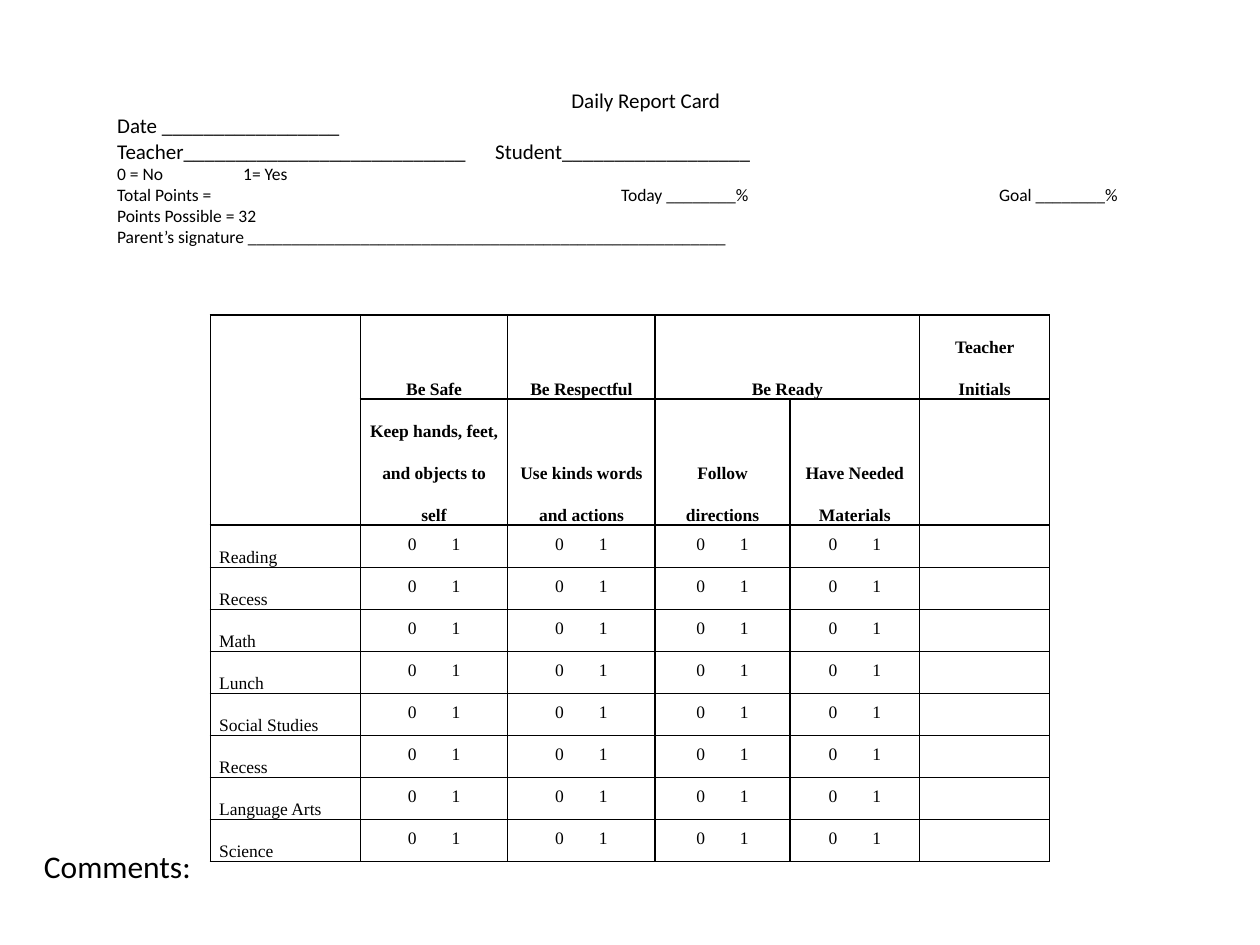
from dataclasses import dataclass

from lxml.etree import SubElement
from pptx import Presentation
from pptx.dml.color import RGBColor
from pptx.enum.text import MSO_ANCHOR, MSO_AUTO_SIZE, PP_ALIGN
from pptx.oxml.ns import qn
from pptx.util import Inches, Pt

BLACK = "000000"
FORM_FONT = "Calibri"
TABLE_FONT = "Times New Roman"
GRID_LINE = 24  # points per text line in the table
COLUMN_WIDTHS = [1.19, 1.17, 1.17, 1.07, 1.03, 1.03]
ROW_LINES = [2, 3] + [1] * 8
SUBJECTS = ["Reading", "Recess", "Math", "Lunch", "Social Studies", "Recess",
            "Language Arts", "Science"]
SCORE_COLUMNS = range(1, 5)


@dataclass
class FormLine:
    text: str
    size: int
    tabs: tuple = ()


@dataclass
class Heading:
    row: int
    column: int
    text: str


FORM_LINES = [
    FormLine("Daily Report Card", 12),
    FormLine("Date _________________", 12),
    FormLine("Teacher___________________________\tStudent__________________", 12, (3,)),
    FormLine("0 = No\t1= Yes", 10, (1,)),
    FormLine("Total Points =\tToday ________%\tGoal ________%", 10, (4, 7)),
    FormLine("Points Possible = 32", 10),
    FormLine("Parent’s signature _______________________________________________________", 10),
]
HEADINGS = [
    Heading(0, 1, "Be Safe"),
    Heading(0, 2, "Be Respectful"),
    Heading(0, 3, "Be Ready"),
    Heading(0, 5, "Teacher Initials"),
    Heading(1, 1, "Keep hands, feet, and objects to self"),
    Heading(1, 2, "Use kinds words and actions"),
    Heading(1, 3, "Follow directions"),
    Heading(1, 4, "Have Needed Materials"),
]


def color(value: str) -> RGBColor:
    return RGBColor.from_string(value)


def format_runs(paragraph, font_name: str, size: int, bold: bool = False) -> None:
    for run in paragraph.runs:
        run.font.name = font_name
        run.font.size = Pt(size)
        run.font.bold = bold
        run.font.color.rgb = color(BLACK)


def add_tabs(paragraph, positions: tuple) -> None:
    if positions:
        tab_list = SubElement(paragraph._p.get_or_add_pPr(), qn("a:tabLst"))
        for position in positions:
            SubElement(tab_list, qn("a:tab"), pos=str(Inches(position)), algn="l")


def draw_form(shape) -> None:
    shape.left, shape.top = Inches(0.83), Inches(0.64)
    shape.width, shape.height = Inches(8.34), Inches(1.38)
    text_frame = shape.text_frame
    text_frame.word_wrap = True
    text_frame.auto_size = MSO_AUTO_SIZE.SHAPE_TO_FIT_TEXT
    text_frame.vertical_anchor = MSO_ANCHOR.MIDDLE
    text_frame.text = "\n".join(line.text for line in FORM_LINES)
    for paragraph, line in zip(text_frame.paragraphs, FORM_LINES):
        add_tabs(paragraph, line.tabs)
        paragraph.alignment = PP_ALIGN.LEFT
        format_runs(paragraph, FORM_FONT, line.size)
    heading = text_frame.paragraphs[0]
    heading.alignment = PP_ALIGN.CENTER
    heading._p.get_or_add_pPr().set("indent", str(Inches(0.25)))


def draw_comments(slide) -> None:
    shape = slide.shapes.add_textbox(Inches(0.25), Inches(6.67), Inches(9.42), Inches(0.4))
    text_frame = shape.text_frame
    text_frame.word_wrap = True
    text_frame.auto_size = MSO_AUTO_SIZE.SHAPE_TO_FIT_TEXT
    text_frame.text = "Comments:"
    format_runs(text_frame.paragraphs[0], FORM_FONT, 18)


def style_cell(cell) -> None:
    cell.margin_left = cell.margin_right = Inches(0.07)
    cell.margin_top = cell.margin_bottom = 0
    properties = cell._tc.get_or_add_tcPr()
    for side in ("a:lnL", "a:lnR", "a:lnT", "a:lnB"):
        line = SubElement(properties, qn(side), w=str(Pt(1)))
        fill = SubElement(line, qn("a:solidFill"))
        SubElement(fill, qn("a:srgbClr"), val=BLACK)
    cell.fill.background()


def write_heading(cell, text: str) -> None:
    cell.vertical_anchor = MSO_ANCHOR.BOTTOM
    cell.text_frame.text = text
    paragraph = cell.text_frame.paragraphs[0]
    paragraph.alignment = PP_ALIGN.CENTER
    paragraph.line_spacing = Pt(GRID_LINE)
    format_runs(paragraph, TABLE_FONT, 10, bold=True)


def write_subject(cell, text: str) -> None:
    cell.text_frame.text = text
    paragraph = cell.text_frame.paragraphs[0]
    paragraph.line_spacing = Pt(GRID_LINE)
    format_runs(paragraph, TABLE_FONT, 10)


def write_score(cell) -> None:
    paragraph = cell.text_frame.paragraphs[0]
    paragraph.alignment = PP_ALIGN.CENTER
    paragraph.line_spacing = 1.5
    for text in ("0", " ", "1"):
        paragraph.add_run().text = text
    format_runs(paragraph, TABLE_FONT, 10)
    # Widen the space between the two choices
    paragraph.runs[1].font._element.set("spc", "1750")


def draw_table(slide) -> None:
    frame = slide.shapes.add_table(
        len(ROW_LINES), len(COLUMN_WIDTHS), Inches(1.67), Inches(2.5),
        Inches(sum(COLUMN_WIDTHS)), Pt(GRID_LINE * sum(ROW_LINES)))
    table = frame.table
    table.first_row = table.horz_banding = False
    for column, width in zip(table.columns, COLUMN_WIDTHS):
        column.width = Inches(width)
    for row, lines in zip(table.rows, ROW_LINES):
        row.height = Pt(GRID_LINE * lines)
    for cell in table.iter_cells():
        style_cell(cell)
    table.cell(0, 0).merge(table.cell(1, 0))
    table.cell(0, 3).merge(table.cell(0, 4))

    for heading in HEADINGS:
        write_heading(table.cell(heading.row, heading.column), heading.text)
    for row, subject in enumerate(SUBJECTS, start=2):
        write_subject(table.cell(row, 0), subject)
        for column in SCORE_COLUMNS:
            write_score(table.cell(row, column))


def main() -> None:
    presentation = Presentation()
    presentation.slide_width, presentation.slide_height = Inches(10), Inches(7.5)
    slide = presentation.slides.add_slide(presentation.slide_layouts[5])  # Title Only

    # Form header, score table and comments line
    draw_form(slide.shapes.title)
    draw_table(slide)
    draw_comments(slide)
    presentation.save("out.pptx")


if __name__ == "__main__":
    main()
